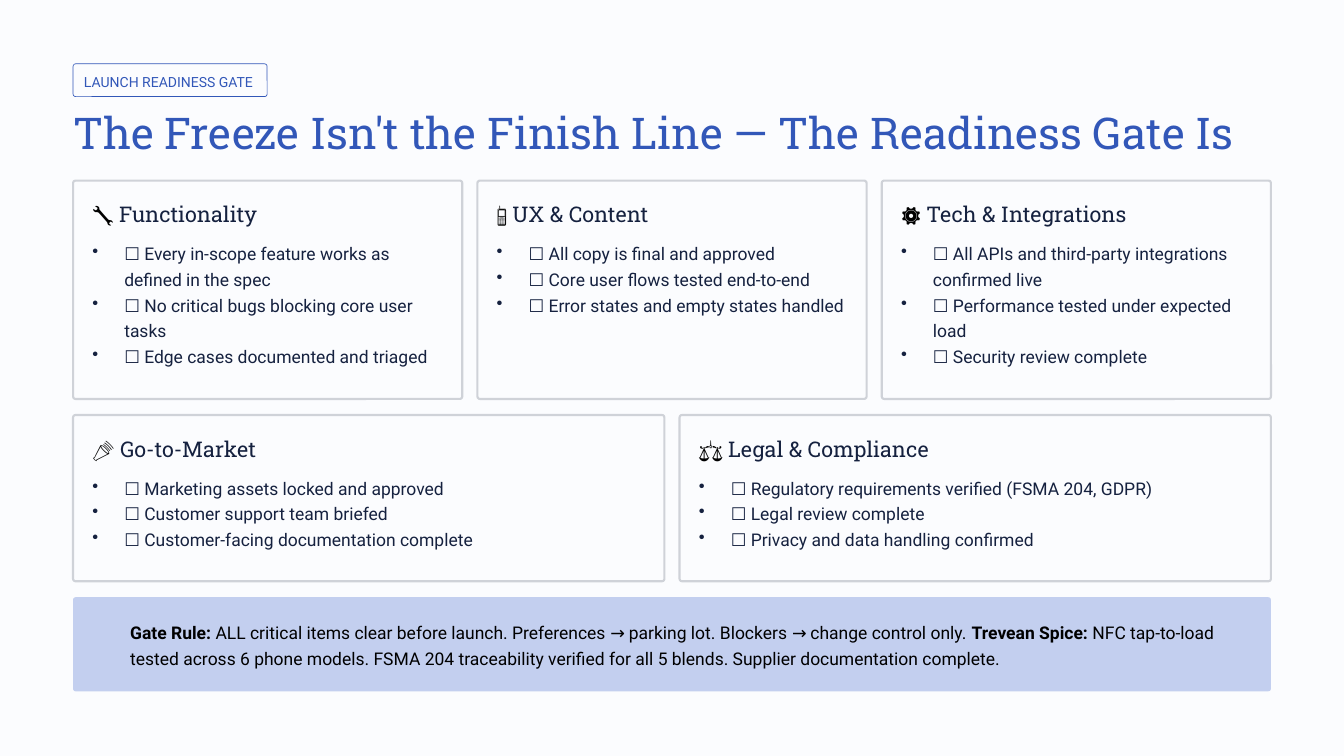
from lxml import etree
from pptx import Presentation
from pptx.dml.color import RGBColor
from pptx.enum.shapes import MSO_SHAPE as SHAPE
from pptx.oxml.ns import qn
from pptx.util import Inches, Pt

COLORS = {
    "paper": "FBFCFE",
    "blue": "3257B8",
    "navy": "15213F",
    "border": "CFD2D8",
    "banner": "C3CFEF",
    "black": "000000",
}
BODY, HEADING = "Roboto", "Roboto Slab"

# Grid, in inches
LEFT, WIDTH, GAP = 0.87, 14.26, 0.18
PAD = 0.23
RADIUS = 0.03
INDENT = 0.38

# Each row: top, height, cards of (icon, title, checklist)
ROWS = [
    (2.15, 2.6, [
        ("🔧", "Functionality", [
            "Every in-scope feature works as defined in the spec",
            "No critical bugs blocking core user tasks",
            "Edge cases documented and triaged"]),
        ("📱", "UX & Content", [
            "All copy is final and approved",
            "Core user flows tested end-to-end",
            "Error states and empty states handled"]),
        ("⚙️", "Tech & Integrations", [
            "All APIs and third-party integrations confirmed live",
            "Performance tested under expected load",
            "Security review complete"]),
    ]),
    (4.94, 1.98, [
        ("📣", "Go-to-Market", [
            "Marketing assets locked and approved",
            "Customer support team briefed",
            "Customer-facing documentation complete"]),
        ("⚖️", "Legal & Compliance", [
            "Regulatory requirements verified (FSMA 204, GDPR)",
            "Legal review complete",
            "Privacy and data handling confirmed"]),
    ]),
]

GATE_RULE = [
    ("Gate Rule:", {"bold": True}),
    (" ALL critical items clear before launch. Preferences → parking lot. "
     "Blockers → change control only. ", {}),
    ("Trevean Spice:", {"bold": True}),
    (" NFC tap-to-load tested across 6 phone models. FSMA 204 traceability "
     "verified for all 5 blends. Supplier documentation complete.", {}),
]


def rgb(name):
    return RGBColor.from_string(COLORS[name])


def add_panel(s, x, y, w, h, fill=None, line=None, weight=1.8):
    """Rounded rectangle with the same corner radius at every size."""
    sp = s.shapes.add_shape(SHAPE.ROUNDED_RECTANGLE,
                            Inches(x), Inches(y), Inches(w), Inches(h))
    sp.shadow.inherit = False
    sp.adjustments[0] = RADIUS / min(w, h)
    if fill:
        sp.fill.solid()
        sp.fill.fore_color.rgb = rgb(fill)
    else:
        sp.fill.background()
    if line:
        sp.line.color.rgb = rgb(line)
        sp.line.width = Pt(weight)
    else:
        sp.line.fill.background()


def add_bullet(p):
    pPr = p._p.get_or_add_pPr()
    pPr.set("marL", str(Inches(INDENT)))
    pPr.set("indent", str(-Inches(INDENT)))
    etree.SubElement(pPr, qn("a:buChar")).set("char", "•")


def add_text(s, x, y, w, h, paragraphs, size=15, font=BODY, color="navy",
             spacing=22, bullets=False, wrap=True):
    """Each paragraph is a list of (text, overrides) runs."""
    tf = s.shapes.add_textbox(Inches(x), Inches(y), Inches(w), Inches(h)).text_frame
    tf.margin_left = tf.margin_right = tf.margin_top = tf.margin_bottom = 0
    tf.word_wrap = wrap
    for i, runs in enumerate(paragraphs):
        p = tf.add_paragraph() if i else tf.paragraphs[0]
        if bullets:
            add_bullet(p)
        p.line_spacing = Pt(spacing)
        for text, style in runs:
            r = p.add_run()
            r.text = text
            r.font.name = font
            r.font.size = Pt(size)
            r.font.bold = style.get("bold", False)
            r.font.color.rgb = rgb(style.get("color", color))


def add_card(s, x, y, w, h, icon, title, items):
    add_panel(s, x, y, w, h, fill="paper", line="border")
    inner = w - 2 * PAD
    add_text(s, x + PAD, y + PAD, inner, 0.34,
             [[(icon, {"color": "black"}), (f" {title}", {})]],
             size=18.5, font=HEADING, spacing=23.5, wrap=False)
    add_text(s, x + PAD, y + 0.69, inner, h - 0.91,
             [[(f"☐ {item}", {})] for item in items], bullets=True)


def main():
    prs = Presentation()
    prs.slide_width, prs.slide_height = Inches(16), Inches(9)
    s = prs.slides.add_slide(prs.slide_layouts[6])
    s.background.fill.solid()
    s.background.fill.fore_color.rgb = rgb("paper")

    # Tag and title
    add_panel(s, LEFT, 0.76, 2.31, 0.39, line="blue", weight=0.6)
    add_text(s, 1, 0.83, 2.04, 0.25, [[("LAUNCH READINESS GATE", {})]],
             size=12, color="blue", spacing=17.5, wrap=False)
    add_text(s, LEFT, 1.23, 13.92, 0.66,
             [[("The Freeze Isn't the Finish Line — The Readiness Gate Is", {})]],
             size=37.5, font=HEADING, color="blue", spacing=47, wrap=False)

    # Checklist cards
    for top, height, cards in ROWS:
        w = (WIDTH - GAP * (len(cards) - 1)) / len(cards)
        for col, card in enumerate(cards):
            add_card(s, LEFT + col * (w + GAP), top, w, height, *card)

    # Gate rule banner
    add_panel(s, LEFT, 7.11, WIDTH, 1.12, fill="banner")
    add_text(s, 1.55, 7.35, 13.37, 0.62, [GATE_RULE], color="black")

    prs.save("out.pptx")


if __name__ == "__main__":
    main()
